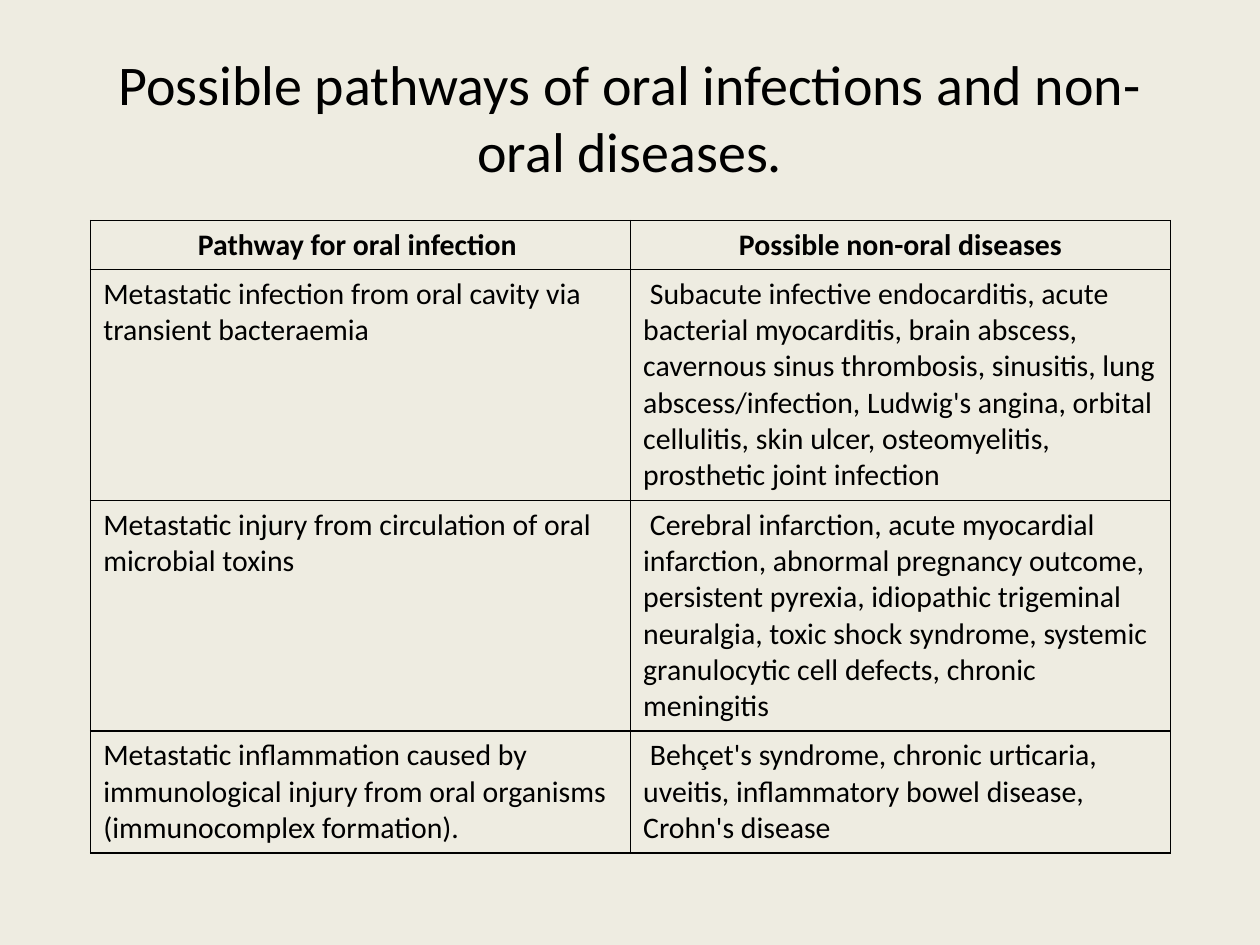
from pptx import Presentation, util as u
from pptx.dml.color import RGBColor
from pptx.enum import text
from pptx.oxml import ns
from lxml import etree

HUES = {"ground": "EEECE1", "ink": "000000"}
FONT = "Calibri"
ROWS = [
    ("Pathway for oral infection ", "Possible non-oral diseases"),
    ("Metastatic infection from oral cavity via transient bacteraemia",
     " Subacute infective endocarditis, acute bacterial myocarditis, "
     "brain abscess, cavernous sinus thrombosis, sinusitis, lung "
     "abscess/infection, Ludwig's angina, orbital cellulitis, skin ulcer, "
     "osteomyelitis, prosthetic joint infection"),
    ("Metastatic injury from circulation of oral microbial toxins",
     " Cerebral infarction, acute myocardial infarction, abnormal pregnancy "
     "outcome, persistent pyrexia, idiopathic trigeminal neuralgia, toxic "
     "shock syndrome, systemic granulocytic cell defects, chronic meningitis"),
    ("Metastatic inflammation caused by immunological injury from oral "
     "organisms\n(immunocomplex formation).",
     " Behçet's syndrome, chronic urticaria, uveitis, inflammatory bowel "
     "disease, Crohn's disease"),
]
HIGHS = [0.38, 1.81, 1.81, 0.95]


class Deck:
    def __init__(self):
        self.prs = Presentation()
        self.prs.slide_width, self.prs.slide_height = u.Inches(10), u.Inches(7.5)
        self.slide = self.prs.slides.add_slide(self.prs.slide_layouts[5])
        fill = self.slide.background.fill
        fill.solid()
        fill.fore_color.rgb = self.hue("ground")

    def hue(self, name):
        return RGBColor.from_string(HUES[name])

    def words(self, frame, lines, size, bold=False, align=text.PP_ALIGN.LEFT):
        for i, line in enumerate(lines.split("\n")):
            para = frame.add_paragraph() if i else frame.paragraphs[0]
            para.alignment = align
            run = para.add_run()
            run.text = line
            font = run.font
            font.name, font.size, font.bold = FONT, u.Pt(size), bold
            font.color.rgb = self.hue("ink")

    def title(self, lines, box):
        shape = self.slide.shapes.title
        shape.left, shape.top, shape.width, shape.height = map(u.Inches, box)
        frame = shape.text_frame
        frame.word_wrap = True
        frame.auto_size = text.MSO_AUTO_SIZE.NONE
        frame.vertical_anchor = text.MSO_ANCHOR.MIDDLE
        self.words(frame, lines, 32, align=text.PP_ALIGN.CENTER)

    def border(self, cell):
        props = cell._tc.get_or_add_tcPr()
        for i, side in enumerate(("lnL", "lnR", "lnT", "lnB")):
            line = etree.Element(ns.qn("a:" + side), w=str(u.Pt(1)))
            fill = etree.SubElement(line, ns.qn("a:solidFill"))
            etree.SubElement(fill, ns.qn("a:srgbClr"), val=HUES["ink"])
            props.insert(i, line)

    def table(self, rows, highs, box):
        grid = self.slide.shapes.add_table(
            len(rows), len(rows[0]), *map(u.Inches, box)).table
        grid.horz_banding = False
        for row, high in zip(grid.rows, highs):
            row.height = u.Inches(high)
        for i, row in enumerate(rows):
            head = i == 0
            align = text.PP_ALIGN.CENTER if head else text.PP_ALIGN.LEFT
            for j, lines in enumerate(row):
                cell = grid.cell(i, j)
                cell.fill.background()
                self.border(cell)
                self.words(cell.text_frame, lines, 17, head, align)


def main():
    deck = Deck()
    deck.title("Possible pathways of oral infections and non-oral diseases.",
               (0.5, 0.3, 9, 1.25))
    deck.table(ROWS, HIGHS, (0.72, 1.75, 8.57, sum(HIGHS)))
    deck.prs.save("out.pptx")


if __name__ == "__main__":
    main()
